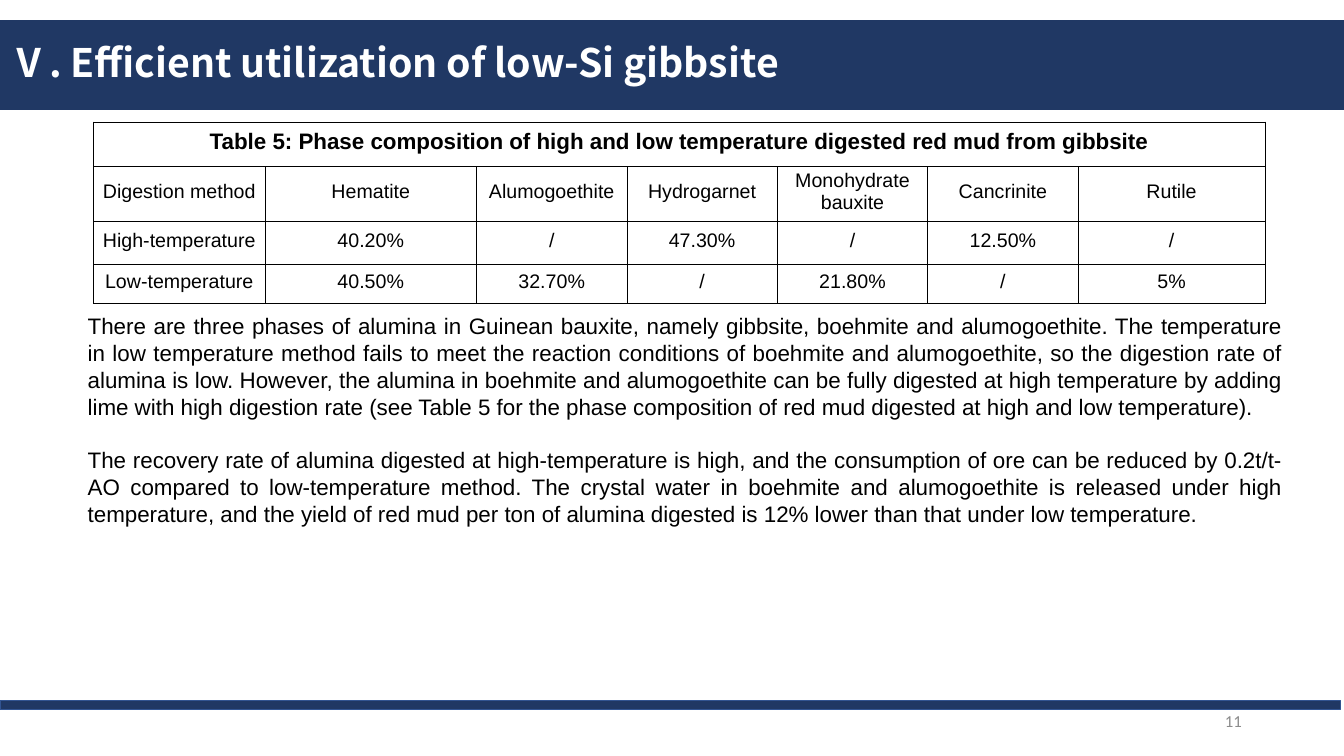
from pptx import Presentation
from pptx.dml.color import RGBColor
from pptx.enum.shapes import MSO_SHAPE
from pptx.enum.text import MSO_ANCHOR, PP_ALIGN
from pptx.oxml import parse_xml
from pptx.oxml.ns import nsdecls
from pptx.util import Cm, Pt

TITLE = "Ⅴ. Efficient utilization of low-Si gibbsite"
PAGE_NUMBER = "11"
TABLE_TITLE = "Table 5: Phase composition of high and low temperature digested red mud from gibbsite"
PHASES = [
    ["Digestion method", "Hematite", "Alumogoethite", "Hydrogarnet",
     "Monohydrate bauxite", "Cancrinite", "Rutile"],
    ["High-temperature", "40.20%", "/", "47.30%", "/", "12.50%", "/"],
    ["Low-temperature", "40.50%", "32.70%", "/", "21.80%", "/", "5%"],
]
BODY = [
    "There are three phases of alumina in Guinean bauxite, namely gibbsite, boehmite and "
    "alumogoethite. The temperature in low temperature method fails to meet the reaction "
    "conditions of boehmite and alumogoethite, so the digestion rate of alumina is low. "
    "However, the alumina in boehmite and alumogoethite can be fully digested at high "
    "temperature by adding lime with high digestion rate (see Table 5 for the phase "
    "composition of red mud digested at high and low temperature).",
    "The recovery rate of alumina digested at high-temperature is high, and the consumption "
    "of ore can be reduced by 0.2t/t-AO compared to low-temperature method. The crystal "
    "water in boehmite and alumogoethite is released under high temperature, and the yield "
    "of red mud per ton of alumina digested is 12% lower than that under low temperature.",
]

COLORS = {"navy": "203864", "edge": "325491", "grey": "8C8C8C",
          "white": "FFFFFF", "black": "000000"}
COL_WIDTHS = [4.32, 5.33] + [3.79] * 4 + [4.71]
ROW_HEIGHTS = [1.13, 1.37, 1.1, 0.98]


def rgb(name):
    return RGBColor.from_string(COLORS[name])


def add_bar(slide, left, top, width, height, fill, line=None):
    sp = slide.shapes.add_shape(MSO_SHAPE.RECTANGLE, Cm(left), Cm(top), Cm(width), Cm(height))
    sp.shadow.inherit = False
    sp.fill.solid()
    sp.fill.fore_color.rgb = rgb(fill)
    if line:
        sp.line.color.rgb = rgb(line)
        sp.line.width = Pt(1)
    else:
        sp.line.fill.background()
    return sp


def write(p, text, size, font="Arial", color="black", bold=False, align=PP_ALIGN.LEFT):
    p.text = text
    p.alignment = align
    for r in p.runs:
        r.font.name = font
        r.font.size = Pt(size)
        r.font.bold = bold
        r.font.color.rgb = rgb(color)
        r.font._element.get_or_add_latin().addnext(
            parse_xml(f'<a:ea {nsdecls("a")} typeface="{font}"/>'))


def add_label(slide, left, top, width, height, text, size, **style):
    tf = slide.shapes.add_textbox(Cm(left), Cm(top), Cm(width), Cm(height)).text_frame
    tf.word_wrap = True
    tf.vertical_anchor = MSO_ANCHOR.MIDDLE
    write(tf.paragraphs[0], text, size, **style)
    return tf


def add_borders(cell):
    tc_pr = cell._tc.get_or_add_tcPr()
    for i, side in enumerate(("lnL", "lnR", "lnT", "lnB")):
        tc_pr.insert(i, parse_xml(
            f'<a:{side} {nsdecls("a")} w="{Pt(0.5)}"><a:solidFill>'
            f'<a:srgbClr val="{COLORS["black"]}"/></a:solidFill></a:{side}>'))


def fill_cell(cell, text, size, bold):
    cell.fill.background()
    cell.vertical_anchor = MSO_ANCHOR.MIDDLE
    cell.margin_left = cell.margin_right = cell.margin_top = Cm(0.03)
    cell.margin_bottom = Cm(0.13)
    write(cell.text_frame.paragraphs[0], text, size, bold=bold, align=PP_ALIGN.CENTER)
    add_borders(cell)


def add_phase_table(slide, left, top):
    rows = [[TABLE_TITLE] + [""] * (len(COL_WIDTHS) - 1)] + PHASES
    table = slide.shapes.add_table(len(rows), len(COL_WIDTHS), Cm(left), Cm(top),
                                   Cm(sum(COL_WIDTHS)), Cm(sum(ROW_HEIGHTS))).table
    table.first_row = table.horz_banding = False
    for column, width in zip(table.columns, COL_WIDTHS):
        column.width = Cm(width)
    for i, (row, height) in enumerate(zip(rows, ROW_HEIGHTS)):
        table.rows[i].height = Cm(height)
        for j, text in enumerate(row):
            fill_cell(table.cell(i, j), text, 14 if i else 16, bold=i == 0)
    table.cell(0, 0).merge(table.cell(0, len(COL_WIDTHS) - 1))


def add_body(slide, left, top, width, height):
    tf = add_bar(slide, left, top, width, height, "white").text_frame
    tf.word_wrap = True
    tf.vertical_anchor = MSO_ANCHOR.TOP
    for i, text in enumerate(BODY):
        p = tf.add_paragraph() if i else tf.paragraphs[0]
        write(p, text, 16, align=PP_ALIGN.JUSTIFY)
        if i:
            p.space_before = Pt(19)


def main():
    prs = Presentation()
    prs.slide_width, prs.slide_height = Cm(33.87), Cm(19.05)
    slide = prs.slides.add_slide(prs.slide_layouts[6])
    add_bar(slide, 0, 17.65, 33.78, 0.23, "navy", "edge")
    add_bar(slide, 0, 0.51, 33.87, 2.26, "navy")
    add_label(slide, 23.93, 17.65, 7.62, 1.02, PAGE_NUMBER, 12,
              font="Calibri", color="grey", align=PP_ALIGN.RIGHT)
    title = add_label(slide, 0, -0.2, 29.21, 3.68, TITLE, 28,
                      font="Noto Sans CJK SC", color="white", bold=True)
    title.paragraphs[0].line_spacing = 0.9
    add_body(slide, 1.96, 7.75, 30.61, 6.32)
    add_phase_table(slide, 2.36, 3.07)
    prs.save("out.pptx")


if __name__ == "__main__":
    main()
